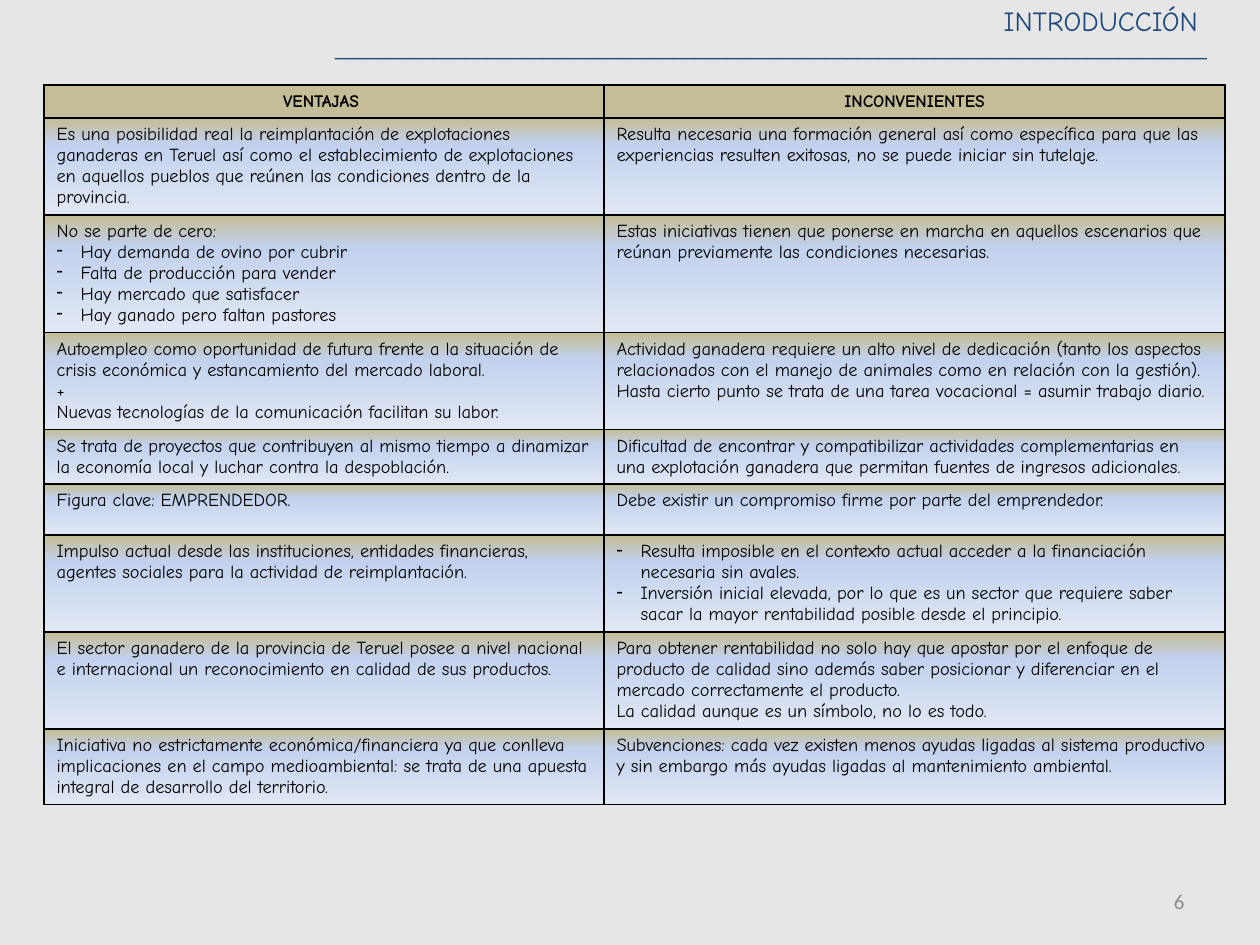
"""Builds the slide that compares advantages and drawbacks of livestock projects."""
from lxml.etree import SubElement
from pptx import Presentation
from pptx.dml.color import RGBColor
from pptx.enum.text import MSO_ANCHOR, PP_ALIGN
from pptx.oxml.ns import qn
from pptx.util import Emu, Pt

COLORS = {
    "background": "E6E6E6",
    "title": "1F497D",
    "number": "8C8C8C",
    "text": "000000",
    "header": "C4BD97",
    "middle": "C2D1ED",
    "bottom": "E1E8F5",
}
GRADIENT = [(1, "header"), (27, "middle"), (100, "bottom")]
COLUMN_WIDTHS = [560, 621]
ROW_HEIGHTS = [33, 97, 117, 97, 54, 51, 97, 97, 75]
HEADERS = ["VENTAJAS ", "INCONVENIENTES"]
BULLET = "- "
ROWS = [
    (["Es una posibilidad real la reimplantación de explotaciones ganaderas en Teruel así como el "
      "establecimiento de explotaciones en aquellos pueblos que reúnen las condiciones dentro de la provincia."],
     ["Resulta necesaria una formación general así como específica para que las experiencias resulten "
      "exitosas, no se puede iniciar sin tutelaje."]),
    (["No se parte de cero:",
      "- Hay demanda de ovino por cubrir",
      "- Falta de producción para vender",
      "- Hay mercado que satisfacer",
      "- Hay ganado pero faltan pastores"],
     ["Estas iniciativas tienen que ponerse en marcha en aquellos escenarios que reúnan previamente "
      "las condiciones necesarias."]),
    (["Autoempleo como oportunidad de futura frente a la situación de crisis económica y estancamiento "
      "del mercado laboral.",
      "+",
      "Nuevas tecnologías de la comunicación facilitan su labor."],
     ["Actividad ganadera requiere un alto nivel de dedicación (tanto los aspectos relacionados con el "
      "manejo de animales como en relación con la gestión). Hasta cierto punto se trata de una tarea "
      "vocacional = asumir trabajo diario."]),
    (["Se trata de proyectos que contribuyen al mismo tiempo a dinamizar la economía local y luchar "
      "contra la despoblación."],
     ["Dificultad de encontrar y compatibilizar actividades complementarias en una explotación ganadera "
      "que permitan fuentes de ingresos adicionales."]),
    (["Figura clave: EMPRENDEDOR."],
     ["Debe existir un compromiso firme por parte del emprendedor."]),
    (["Impulso actual desde las instituciones, entidades financieras, agentes sociales para la actividad "
      "de reimplantación."],
     ["- Resulta imposible en el contexto actual acceder a la financiación necesaria sin avales.",
      "- Inversión inicial elevada, por lo que es un sector que requiere saber sacar la mayor rentabilidad "
      "posible desde el principio."]),
    (["El sector ganadero de la provincia de Teruel posee a nivel nacional e internacional un "
      "reconocimiento en calidad de sus productos."],
     ["Para obtener rentabilidad no solo hay que apostar por el enfoque de producto de calidad sino además "
      "saber posicionar y diferenciar en el mercado correctamente el producto.",
      "La calidad aunque es un símbolo, no lo es todo."]),
    (["Iniciativa no estrictamente económica/financiera ya que conlleva implicaciones en el campo "
      "medioambiental: se trata de una apuesta integral de desarrollo del territorio."],
     ["Subvenciones: cada vez existen menos ayudas ligadas al sistema productivo y sin embargo más ayudas "
      "ligadas al mantenimiento ambiental."]),
]


def px(length):
    return Emu(round(length * 914400 / 126))


class SlideBuilder:
    def __init__(self, slide, font="Comic Neue"):
        self.slide = slide
        self.font = font

    def background(self, color):
        fill = self.slide.background.fill
        fill.solid()
        fill.fore_color.rgb = RGBColor.from_string(COLORS[color])

    def run(self, paragraph, text, size, color="text", bold=False, font=None):
        run = paragraph.add_run()
        run.text = text
        run.font.name = font or self.font
        run.font.size = Pt(size)
        run.font.bold = bold
        run.font.color.rgb = RGBColor.from_string(COLORS[color])

    def text_box(self, left, top, width, height):
        frame = self.slide.shapes.add_textbox(px(left), px(top), px(width), px(height)).text_frame
        frame.word_wrap = True
        frame.vertical_anchor = MSO_ANCHOR.MIDDLE
        paragraph = frame.paragraphs[0]
        paragraph.alignment = PP_ALIGN.RIGHT
        return paragraph

    def bullet(self, paragraph):
        properties = paragraph._p.get_or_add_pPr()
        properties.set("marL", str(px(24)))
        properties.set("indent", str(-px(24)))
        SubElement(properties, qn("a:buChar"), char=BULLET.strip())

    def borders(self, cell):
        properties = cell._tc.get_or_add_tcPr()
        for side in ("lnL", "lnR", "lnT", "lnB"):
            line = SubElement(properties, qn(f"a:{side}"), w=str(Pt(1)))
            solid = SubElement(line, qn("a:solidFill"))
            SubElement(solid, qn("a:srgbClr"), val=COLORS["text"])

    def gradient(self, cell):
        fill = SubElement(cell._tc.get_or_add_tcPr(), qn("a:gradFill"), rotWithShape="1")
        stops = SubElement(fill, qn("a:gsLst"))
        for position, color in GRADIENT:
            stop = SubElement(stops, qn("a:gs"), pos=str(position * 1000))
            SubElement(stop, qn("a:srgbClr"), val=COLORS[color])
        SubElement(fill, qn("a:lin"), ang=str(90 * 60000), scaled="0")

    def header_cell(self, cell, text):
        self.borders(cell)
        cell.fill.solid()
        cell.fill.fore_color.rgb = RGBColor.from_string(COLORS["header"])
        paragraph = cell.text_frame.paragraphs[0]
        paragraph.alignment = PP_ALIGN.CENTER
        self.run(paragraph, text, 10, bold=True)

    def body_cell(self, cell, lines):
        self.borders(cell)
        self.gradient(cell)
        frame = cell.text_frame
        for index, line in enumerate(lines):
            paragraph = frame.add_paragraph() if index else frame.paragraphs[0]
            if line.startswith(BULLET):
                self.bullet(paragraph)
            self.run(paragraph, line.removeprefix(BULLET), 10.5)

    def table(self, left, top):
        table = self.slide.shapes.add_table(
            len(ROW_HEIGHTS), len(COLUMN_WIDTHS), px(left), px(top),
            px(sum(COLUMN_WIDTHS)), px(sum(ROW_HEIGHTS))).table
        table.horz_banding = False
        for column, width in zip(table.columns, COLUMN_WIDTHS):
            column.width = px(width)
        for row, height in zip(table.rows, ROW_HEIGHTS):
            row.height = px(height)
        for column, text in enumerate(HEADERS):
            self.header_cell(table.cell(0, column), text)
        for row, contents in enumerate(ROWS, start=1):
            for column, lines in enumerate(contents):
                self.body_cell(table.cell(row, column), lines)


def main():
    presentation = Presentation()
    presentation.slide_width, presentation.slide_height = px(1260), px(945)
    builder = SlideBuilder(presentation.slides.add_slide(presentation.slide_layouts[6]))
    builder.background("background")
    builder.table(44, 85)
    number = builder.text_box(903, 876, 294, 50)
    builder.run(number, "6", 12, "number", font="Calibri")
    title = builder.text_box(35, 2, 1184, 63)
    builder.run(title, "INTRODUCCIÓN", 15.8, "title")
    builder.run(title, " ", 14.2, "title")
    title.add_line_break()
    builder.run(title, "_" * 80, 12.6, "title")
    presentation.save("out.pptx")


if __name__ == "__main__":
    main()
